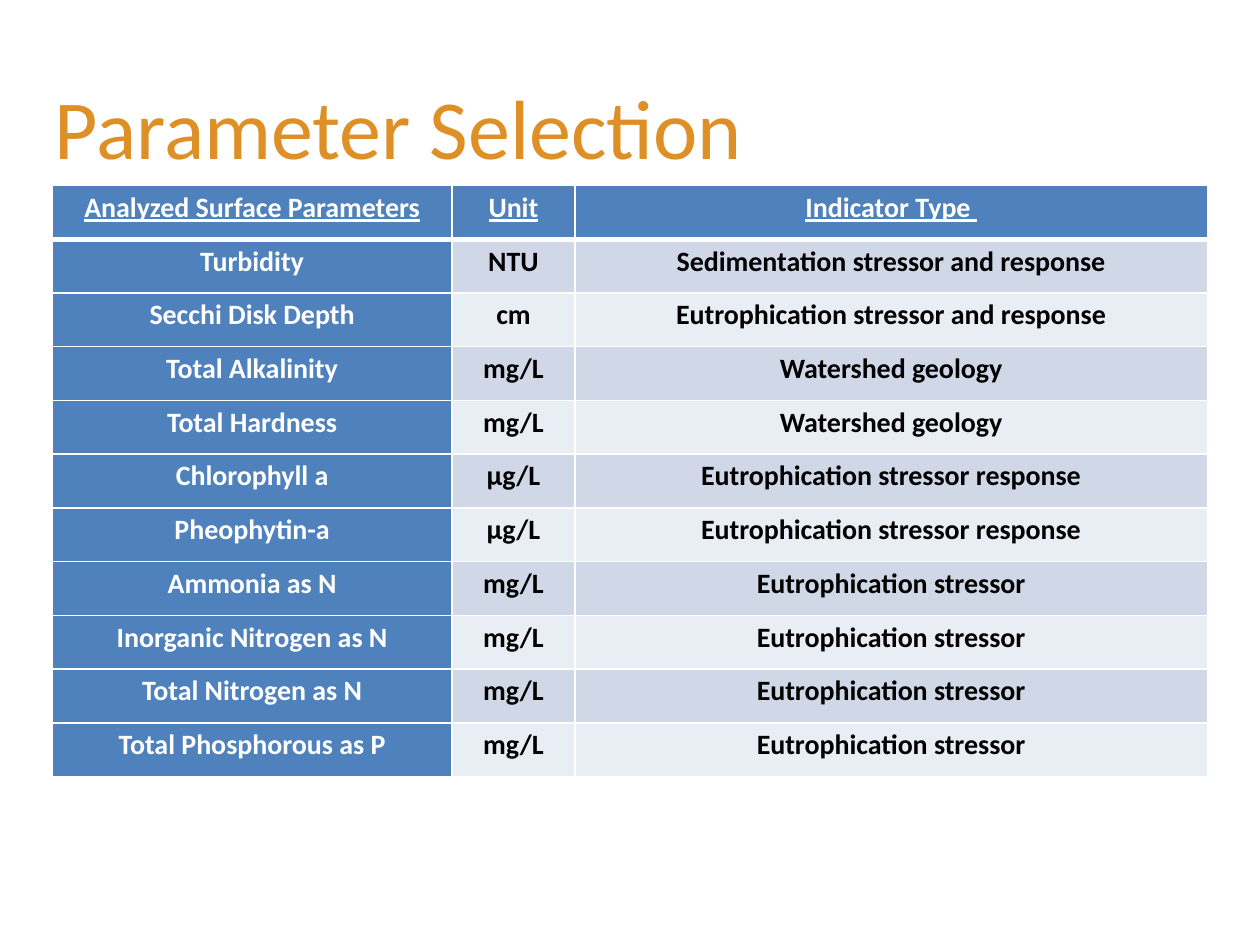
from lxml import etree
from pptx import Presentation
from pptx.dml.color import RGBColor
from pptx.enum.text import MSO_ANCHOR, PP_ALIGN
from pptx.oxml.ns import qn
from pptx.util import Cm, Pt

LEFT, CENTER = PP_ALIGN.LEFT, PP_ALIGN.CENTER
MIDDLE = MSO_ANCHOR.MIDDLE
FONT = "Calibri"
ORANGE = RGBColor(0xDE, 0x90, 0x27)
BLUE = RGBColor(0x4F, 0x81, 0xBD)
DARK = RGBColor(0xD0, 0xD8, 0xE8)
LIGHT = RGBColor(0xE9, 0xED, 0xF4)
WHITE = RGBColor(0xFF, 0xFF, 0xFF)
BLACK = RGBColor(0, 0, 0)

COLS = (3.17, 0.98, 5.02)  # relative widths
ROWS = (
    ("Analyzed Surface Parameters", "Unit", "Indicator Type "),
    ("Turbidity", "NTU", "Sedimentation stressor and response"),
    ("Secchi Disk Depth", "cm", "Eutrophication stressor and response"),
    ("Total Alkalinity", "mg/L", "Watershed geology"),
    ("Total Hardness", "mg/L", "Watershed geology"),
    ("Chlorophyll a", "µg/L", "Eutrophication stressor response"),
    ("Pheophytin-a", "µg/L", "Eutrophication stressor response"),
    ("Ammonia as N", "mg/L", "Eutrophication stressor"),
    ("Inorganic Nitrogen as N", "mg/L", "Eutrophication stressor"),
    ("Total Nitrogen as N", "mg/L", "Eutrophication stressor"),
    ("Total Phosphorous as P", "mg/L", "Eutrophication stressor"),
)


def add_run(para, text, size, color):
    run = para.add_run()
    run.text = text
    run.font.name = FONT
    run.font.size = Pt(size)
    run.font.color.rgb = color
    return run


def set_title(slide, left, top, width, height):
    title = slide.shapes.title
    title.left, title.top, title.width, title.height = left, top, width, height
    frame = title.text_frame
    frame.word_wrap = True
    frame.vertical_anchor = MIDDLE
    para = frame.paragraphs[0]
    para.alignment = LEFT
    add_run(para, "Parameter Selection", 48, ORANGE)


def add_edges(cell, top, bottom):
    """Draw white cell borders; top and bottom are widths in points."""
    props = cell._tc.get_or_add_tcPr()
    for tag, size in (("lnL", 1), ("lnR", 1), ("lnT", top), ("lnB", bottom)):
        line = etree.SubElement(props, qn(f"a:{tag}"), w=str(Pt(size)))
        fill = etree.SubElement(line, qn("a:solidFill"))
        etree.SubElement(fill, qn("a:srgbClr"), val=str(WHITE))


def fill_cell(cell, text, row, col):
    head = row == 0
    key = head or col == 0
    # Heavy rule between the header and the first data row
    add_edges(cell, 3 if row == 1 else 1, 3 if head else 1)
    cell.fill.solid()
    cell.fill.fore_color.rgb = BLUE if key else DARK if row % 2 else LIGHT
    cell.margin_left = cell.margin_right = Cm(0.18)
    cell.margin_top = cell.margin_bottom = 0
    para = cell.text_frame.paragraphs[0]
    para.alignment = CENTER
    para.line_spacing = 1.15
    run = add_run(para, text, 16, WHITE if key else BLACK)
    run.font.bold = True
    run.font.underline = head


def add_grid(slide, left, top, width, height):
    table = slide.shapes.add_table(
        len(ROWS), len(COLS), left, top, width, height).table
    for col, part in zip(table.columns, COLS):
        col.width = int(width * part / sum(COLS))
    for r, texts in enumerate(ROWS):
        for c, text in enumerate(texts):
            fill_cell(table.cell(r, c), text, r, c)


def main():
    deck = Presentation()
    deck.slide_width, deck.slide_height = Cm(25.4), Cm(19.05)
    slide = deck.slides.add_slide(deck.slide_layouts[5])
    set_title(slide, Cm(0.85), Cm(1.27), Cm(23.5), Cm(2.54))
    add_grid(slide, Cm(1.06), Cm(3.74), Cm(23.28), Cm(11.92))
    deck.save("out.pptx")


if __name__ == "__main__":
    main()
